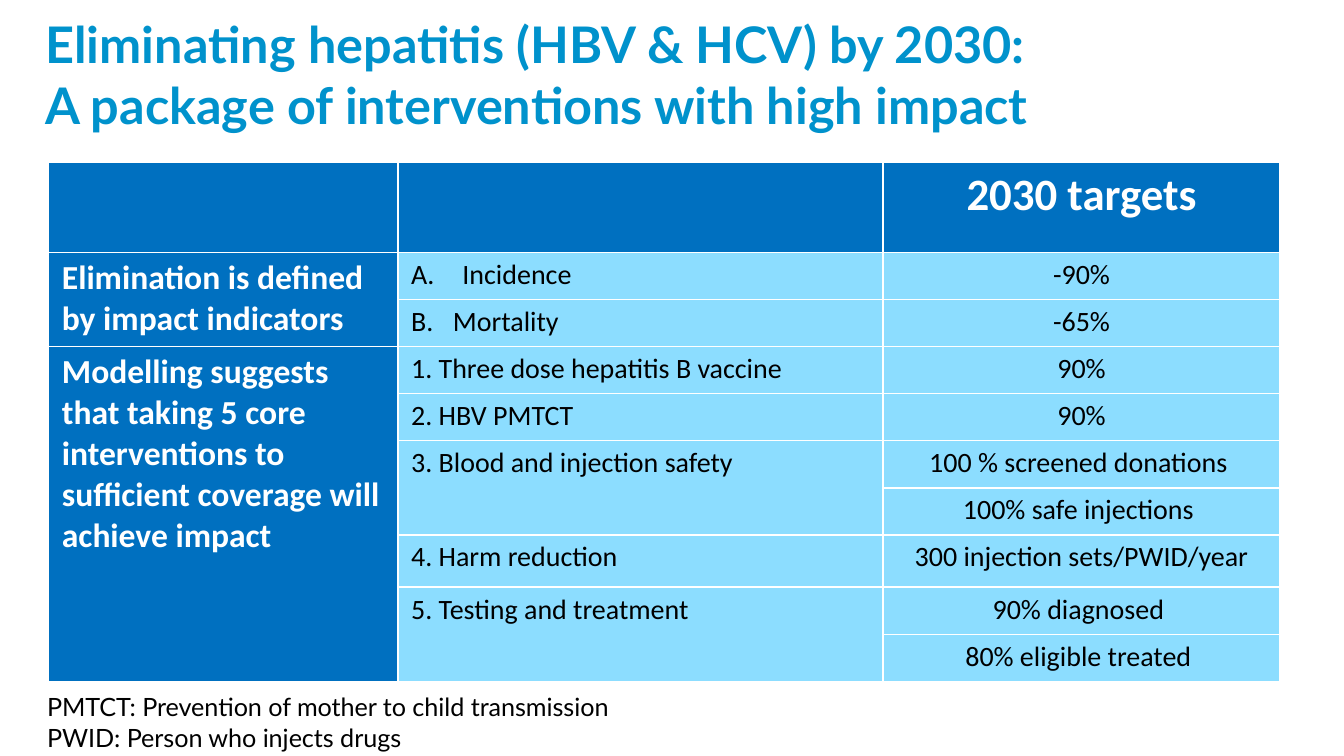
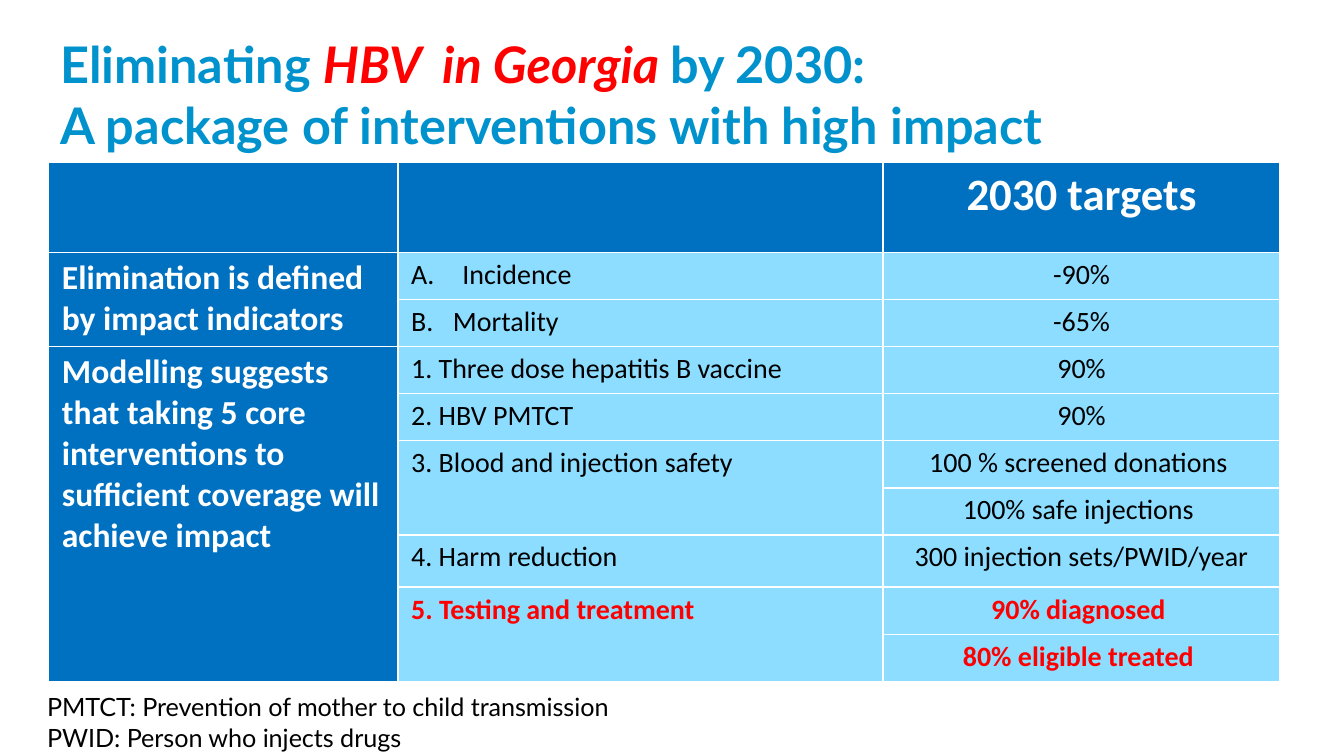
import pptx
import pptx.dml.color
import pptx.enum.text
import pptx.util
from lxml import etree
from pptx.oxml.ns import qn

Cm = pptx.util.Cm
Pt = pptx.util.Pt
CENTER = pptx.enum.text.PP_ALIGN.CENTER

# Shared look
TITLE_BLUE, BAND_BLUE, CELL_BLUE = "0092CC", "0070C0", "8CDDFF"
WHITE, BLACK, RED = "FFFFFF", "000000", "FF0000"
TITLE_FONT, TABLE_FONT = "Lato", "Calibri"


def rgb(value):
    return pptx.dml.color.RGBColor.from_string(value)


def style(font, name, size, color, bold=False):
    font.name, font.size, font.bold = name, Pt(size), bold
    font.color.rgb = rgb(color)


# Shared content
column_widths = [6.6, 9.17, 7.5]
row_heights = [1.7] + [0.89] * 6 + [0.99] + [0.89] * 2
groups = {
    1: "Elimination is defined by impact indicators",
    3: "Modelling suggests that taking 5 core interventions to sufficient coverage will achieve impact",
}
interventions = {
    1: "Incidence",
    2: "Mortality",
    3: "1. Three dose hepatitis B vaccine",
    4: "2. HBV PMTCT",
    5: "3. Blood and injection safety",
    7: "4. Harm reduction",
    8: "5. Testing and treatment",
}
targets = ["2030 targets", "-90%", "-65%", "90%", "90%", "100 % screened donations ",
           "100% safe injections ", "300 injection sets/PWID/year",
           "90% diagnosed ", "80% eligible treated "]
lettered_indents = {1: 0.97, 2: 0.79}
merges = [(1, 0, 2), (3, 0, 9), (5, 1, 6), (8, 1, 9)]
footnotes = ["PMTCT: Prevention of mother to child transmission",
             "PWID: Person who injects drugs"]

# What differs: title place, title lines as (text, highlighted), highlighted rows
second_line = [("A package of interventions with high impact", False)]
slides = [
    (-1.78, 0.13, [[("Eliminating hepatitis (HBV & HCV) by 2030: ", False)], second_line], ()),
    (-1.5, 0.51, [[("Eliminating ", False), ("HBV  in Georgia ", True), ("by 2030: ", False)],
                  second_line], (8, 9)),
]

deck = pptx.Presentation()
deck.slide_width, deck.slide_height = Cm(25.4), Cm(14.29)

for title_left, title_top, title_lines, red_rows in slides:
    slide = deck.slides.add_slide(deck.slide_layouts[6])

    # Table of interventions and targets
    table = slide.shapes.add_table(len(row_heights), len(column_widths), Cm(0.92), Cm(3.07),
                                   Cm(sum(column_widths)), Cm(sum(row_heights))).table
    table.horz_banding = False
    for column, width in zip(table.columns, column_widths):
        column.width = Cm(width)
    for row, height in zip(table.rows, row_heights):
        row.height = Cm(height)
    for first_row, col, last_row in merges:
        table.cell(first_row, col).merge(table.cell(last_row, col))

    for row, target in enumerate(targets):
        texts = [groups.get(row, ""), interventions.get(row, ""), target]
        for col, text in enumerate(texts):
            cell = table.cell(row, col)
            cell.margin_left = cell.margin_right = Cm(0.25)
            cell.margin_top = cell.margin_bottom = Cm(0.1)

            # White cell borders
            for side in ("lnL", "lnR", "lnT", "lnB"):
                border = etree.SubElement(cell._tc.get_or_add_tcPr(), qn("a:" + side), w="12700")
                line_fill = etree.SubElement(border, qn("a:solidFill"))
                etree.SubElement(line_fill, qn("a:srgbClr"), val=WHITE)

            in_band = row == 0 or col == 0
            cell.fill.solid()
            cell.fill.fore_color.rgb = rgb(BAND_BLUE if in_band else CELL_BLUE)

            paragraph = cell.text_frame.paragraphs[0]
            paragraph.text = text
            if col == 2:
                paragraph.alignment = CENTER
            if col == 1 and row in lettered_indents:
                indent = Cm(lettered_indents[row])
                properties = paragraph._p.get_or_add_pPr()
                properties.set("marL", str(indent))
                properties.set("indent", str(-indent))
                etree.SubElement(properties, qn("a:buAutoNum"),
                                 type="alphaUcPeriod", startAt=str(row))

            if row == 0:
                style(paragraph.font, TABLE_FONT, 24, WHITE, True)
            elif col == 0:
                style(paragraph.font, TABLE_FONT, 18, WHITE, True)
            else:
                red = row in red_rows
                style(paragraph.font, TABLE_FONT, 15, RED if red else BLACK, red)

    # Title
    frame = slide.shapes.add_textbox(Cm(title_left), Cm(title_top), Cm(26.3), Cm(2.57)).text_frame
    frame.word_wrap = True
    frame.auto_size = pptx.enum.text.MSO_AUTO_SIZE.SHAPE_TO_FIT_TEXT
    title = frame.paragraphs[0]
    title._p.get_or_add_pPr().set("marL", str(Cm(2.39)))
    for number, line in enumerate(title_lines):
        if number:
            title.add_line_break()
        for text, highlighted in line:
            run = title.add_run()
            run.text = text
            style(run.font, TITLE_FONT, 27, RED if highlighted else TITLE_BLUE, True)
            run.font.italic = highlighted

    # Abbreviations below the table
    frame = slide.shapes.add_textbox(Cm(0.64), Cm(12.95), Cm(11.3), Cm(1.42)).text_frame
    frame.word_wrap = False
    frame.auto_size = pptx.enum.text.MSO_AUTO_SIZE.SHAPE_TO_FIT_TEXT
    frame.text = "\n".join(footnotes)
    for paragraph in frame.paragraphs:
        style(paragraph.font, TITLE_FONT, 13.5, BLACK)

deck.save("out.pptx")
